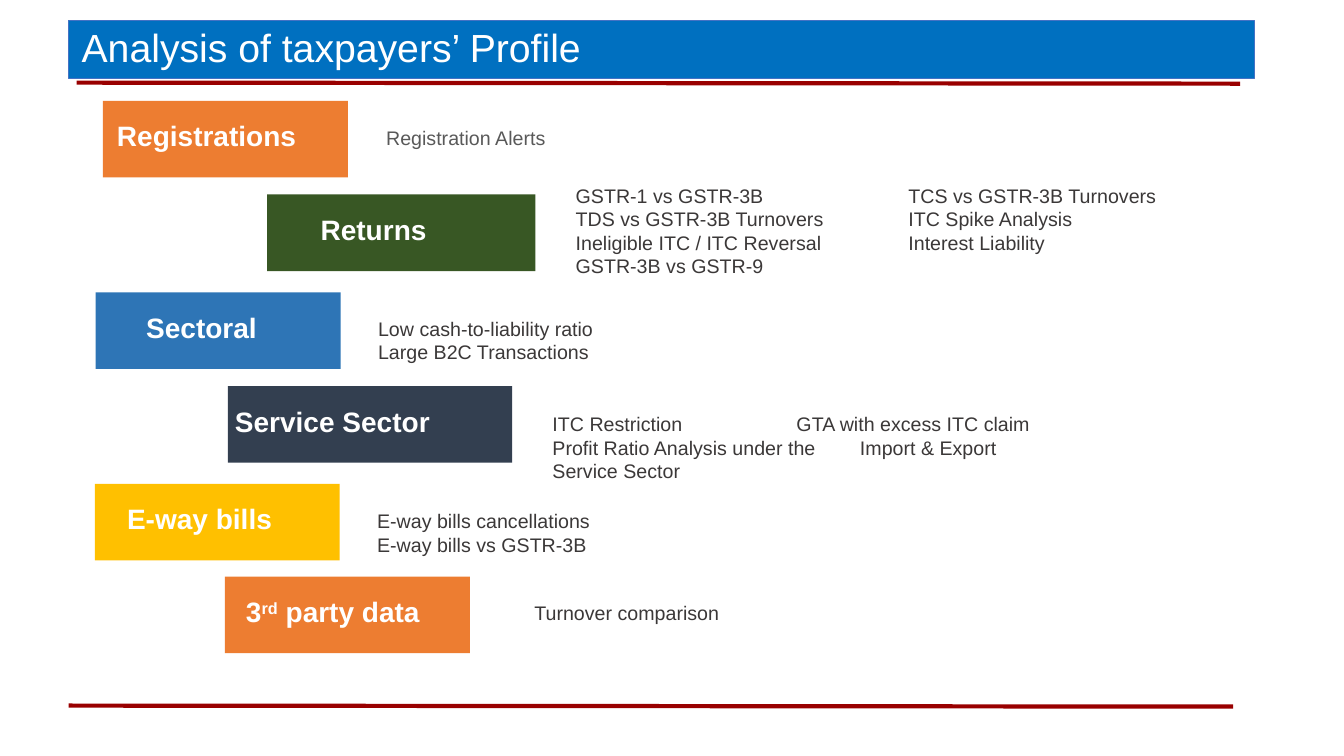
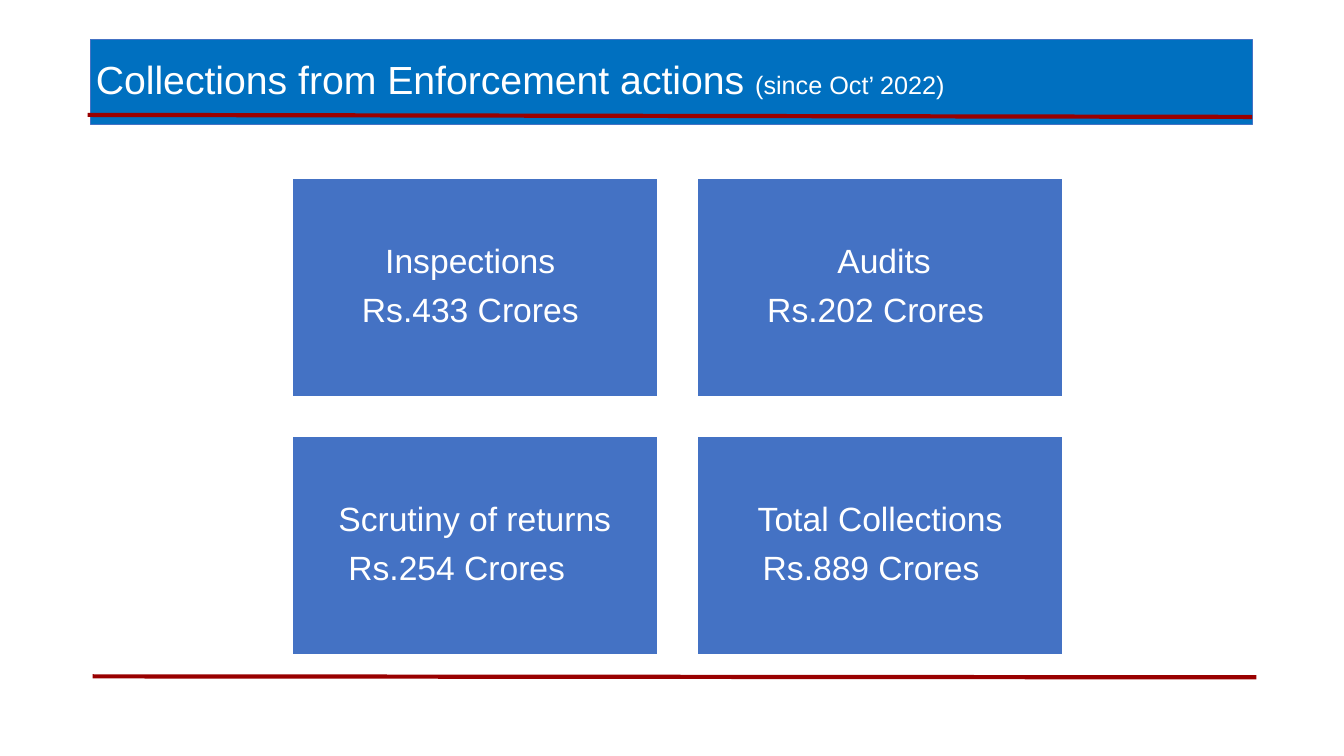
from lxml import etree
from pptx import Presentation
from pptx.dml.color import RGBColor
from pptx.enum.shapes import MSO_CONNECTOR, MSO_SHAPE
from pptx.enum.text import MSO_ANCHOR, MSO_AUTO_SIZE, PP_ALIGN
from pptx.oxml.ns import qn
from pptx.util import Pt

PX = 9144  # 100 px to the inch
FONT = "Arial"

WHITE = RGBColor(0xFF, 0xFF, 0xFF)
BAND = RGBColor(0x00, 0x70, 0xC0)
BLUE = RGBColor(0x44, 0x72, 0xC4)
RED = RGBColor(0x99, 0x00, 0x00)
ORANGE = RGBColor(0xED, 0x7D, 0x31)
GREEN = RGBColor(0x38, 0x57, 0x24)
STEEL = RGBColor(0x2E, 0x75, 0xB6)
SLATE = RGBColor(0x33, 0x3F, 0x50)
GOLD = RGBColor(0xFF, 0xC0, 0x00)
GREY = RGBColor(0x59, 0x59, 0x59)
DARK = RGBColor(0x3B, 0x38, 0x38)

# Title runs, band box, left inset, rules as (x1, y1, x2, y2)
PROFILE_FRAME = dict(
    title=["Analysis of taxpayers’ Profile"],
    box=(68, 20, 1176, 58), inset=13,
    rules=[(76, 82, 1230, 83), (68, 700, 1223, 701)],
)
COLLECTIONS_FRAME = dict(
    title=["Collections from Enforcement actions ", ("(since Oct’ 2022)", dict(size=18))],
    box=(90, 39, 1152, 84), inset=5,
    rules=[(87, 114, 1242, 116), (92, 671, 1246, 672)],
)

# Label runs, fill, box (x, y, width), label inset, note (x, y), note colour,
# note lines; a line with a second column is (left, tab stop, right)
STEP_HEIGHT = 76
STEPS = [
    (["Registrations"], ORANGE, (102, 100, 243), 14, (371, 113), GREY,
     ["Registration Alerts"]),
    (["Returns"], GREEN, (265, 193, 266), 53, (559, 170), DARK,
     [("GSTR-1 vs GSTR-3B", 330, "TCS vs GSTR-3B Turnovers"),
      ("TDS vs GSTR-3B Turnovers", 330, "ITC Spike Analysis"),
      ("Ineligible ITC / ITC Reversal", 330, "Interest Liability"),
      "GSTR-3B vs GSTR-9"]),
    (["Sectoral"], STEEL, (95, 290, 243), 50, (363, 302), DARK,
     ["Low cash-to-liability ratio", "Large B2C Transactions"]),
    (["Service Sector"], SLATE, (226, 383, 282), 7, (536, 397), DARK,
     [("ITC Restriction", 242, "GTA with excess ITC claim"),
      ("Profit Ratio Analysis under the", 305, "Import & Export"),
      "Service Sector"]),
    (["E-way bills"], GOLD, (94, 480, 243), 32, (362, 493), DARK,
     ["E-way bills cancellations", "E-way bills vs GSTR-3B"]),
    (["3", ("rd", dict(baseline=30)), " party data"], ORANGE, (223, 572, 243), 21,
     (518, 584), DARK, ["Turnover comparison"]),
]

# Label, amount, label indent, extra right inset
CARDS = [
    ("Inspections", "Rs.433 Crores", 0, 9),
    ("Audits", "Rs.202 Crores", 17, 9),
    ("Scrutiny of returns", "Rs.254 Crores", 36, 36),
    ("Total Collections", "Rs.889 Crores", 18, 18),
]
CARD_ORIGIN, CARD_SIZE, CARD_GAP = (289, 176), (364, 218), 38


def px(*values):
    return [value * PX for value in values]


def set_frame(frame, insets, anchor=MSO_ANCHOR.TOP):
    """Insets run left, top, right, bottom."""
    frame.word_wrap = True
    frame.auto_size = MSO_AUTO_SIZE.NONE
    frame.vertical_anchor = anchor
    (frame.margin_left, frame.margin_top,
     frame.margin_right, frame.margin_bottom) = px(*insets)


def write(paragraph, runs, size=14, color=WHITE, bold=False, align=PP_ALIGN.LEFT,
          spacing=1.0, after=0, indent=0, tab=None):
    """Each run is text, or (text, changes) with its own size or baseline."""
    paragraph.alignment = align
    paragraph.line_spacing = spacing
    paragraph.space_before = Pt(0)
    paragraph.space_after = Pt(after)
    properties = paragraph._p.get_or_add_pPr()
    if indent:
        properties.set("marL", str(indent * PX))
    if tab:
        stops = etree.SubElement(properties, qn("a:tabLst"))
        etree.SubElement(stops, qn("a:tab"), pos=str(tab * PX), algn="l")
    for item in runs:
        text, changes = (item, {}) if isinstance(item, str) else item
        run = paragraph.add_run()
        run.text = text
        run.font.name = FONT
        run.font.size = Pt(changes.get("size", size))
        run.font.bold = bold
        run.font.color.rgb = color
        if "baseline" in changes:
            run._r.get_or_add_rPr().set("baseline", str(changes["baseline"] * 1000))


def add_box(slide, box, fill, line=None):
    shape = slide.shapes.add_shape(MSO_SHAPE.RECTANGLE, *px(*box))
    shape.shadow.inherit = False
    shape.fill.solid()
    shape.fill.fore_color.rgb = fill
    if line:
        shape.line.color.rgb = line
        shape.line.width = Pt(2)
    else:
        shape.line.fill.background()
    return shape


def add_rule(slide, ends):
    rule = slide.shapes.add_connector(MSO_CONNECTOR.STRAIGHT, *px(*ends))
    rule.line.color.rgb = RED
    rule.line.width = Pt(3)
    etree.SubElement(rule._element.spPr, qn("a:effectLst"))


def add_framed_slide(presentation, title, box, inset, rules):
    """Title band and red rules, shared by the slides."""
    slide = presentation.slides.add_slide(presentation.slide_layouts[5])
    band = slide.shapes.title
    band.left, band.top, band.width, band.height = px(*box)
    band.fill.solid()
    band.fill.fore_color.rgb = BAND
    band.line.color.rgb = BLUE
    band.line.width = Pt(0.5)
    set_frame(band.text_frame, (inset, 5, 5, 5), MSO_ANCHOR.MIDDLE)
    write(band.text_frame.paragraphs[0], title, size=28, spacing=0.9)
    for ends in rules:
        add_rule(slide, ends)
    return slide


def add_step(slide, label, fill, box, inset, note_at, note_color, lines):
    step = add_box(slide, (*box, STEP_HEIGHT), fill)
    set_frame(step.text_frame, (inset, 18, 0, 0))
    write(step.text_frame.paragraphs[0], label, size=20, bold=True)

    note = slide.shapes.add_textbox(*px(*note_at, 650, 24 + 24 * len(lines)))
    frame = note.text_frame
    set_frame(frame, (12, 12, 12, 12))
    for index, line in enumerate(lines):
        paragraph = frame.add_paragraph() if index else frame.paragraphs[0]
        if isinstance(line, str):
            write(paragraph, [line], color=note_color)
        else:
            left, tab, right = line
            write(paragraph, [f"{left}\t{right}"], color=note_color, tab=tab)


def add_card(slide, index, label, amount, indent, extra):
    row, column = divmod(index, 2)
    left, top = (start + place * (size + CARD_GAP) for start, place, size
                 in zip(CARD_ORIGIN, (column, row), CARD_SIZE))
    card = add_box(slide, (left, top, *CARD_SIZE), BLUE, WHITE)
    frame = card.text_frame
    set_frame(frame, (10, 10, 10 + extra, 10), MSO_ANCHOR.MIDDLE)
    style = dict(size=24, align=PP_ALIGN.CENTER, spacing=0.9, after=9)
    write(frame.paragraphs[0], [label], indent=indent, **style)
    write(frame.add_paragraph(), [amount], **style)


def main():
    presentation = Presentation()
    presentation.slide_width, presentation.slide_height = px(1333, 750)

    # Taxpayer profile
    profile = add_framed_slide(presentation, **PROFILE_FRAME)
    for step in STEPS:
        add_step(profile, *step)

    # Collections
    collections = add_framed_slide(presentation, **COLLECTIONS_FRAME)
    for index, card in enumerate(CARDS):
        add_card(collections, index, *card)

    presentation.save("out.pptx")


if __name__ == "__main__":
    main()
